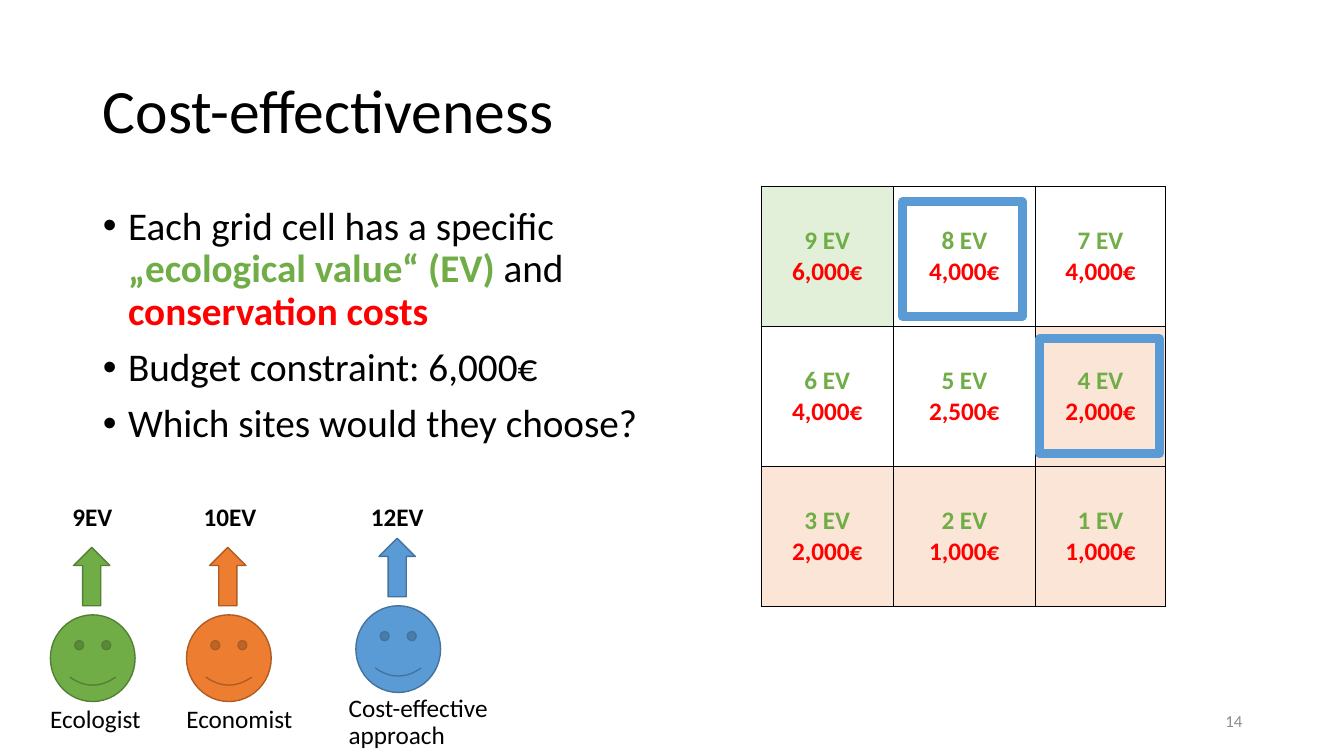
from lxml import etree
from pptx import Presentation
from pptx.dml.color import RGBColor
from pptx.enum import shapes, text
from pptx.oxml import ns, parse_xml
from pptx.util import Inches, Pt

COLORS = {
    "black": "000000", "gray": "8C8C8C", "green": "70AD47", "red": "FF0000",
    "orange": "ED7D31", "blue": "5B9BD5", "dark green": "538035",
    "dark orange": "AF5C24", "dark blue": "43739E",
    "pale green": "E2F0D9", "pale orange": "FBE5D6",
}


def style(font, size, color, bold=False):
    font.name = "Calibri"
    font.size = Pt(size)
    font.bold = bold
    font.color.rgb = RGBColor.from_string(COLORS[color])


def add_label(box, words, size, color="black", bold=False, spacing=0.9):
    label = slide.shapes.add_textbox(*map(Inches, box))
    label.text_frame.word_wrap = True
    paragraph = label.text_frame.paragraphs[0]
    paragraph.text = words
    paragraph.line_spacing = spacing
    paragraph.space_before = Pt(10)
    style(paragraph.font, size, color, bold)
    return label


deck = Presentation()
deck.slide_width, deck.slide_height = Inches(13.33), Inches(7.5)
slide = deck.slides.add_slide(deck.slide_layouts[1])

title, body = slide.placeholders
title.left, title.top, title.width, title.height = map(Inches, (0.92, 0.4, 11.5, 1.45))
title.text_frame.text = "Cost-effectiveness"
title.text_frame.vertical_anchor = text.MSO_ANCHOR.MIDDLE
title.text_frame.auto_size = text.MSO_AUTO_SIZE.NONE
heading = title.text_frame.paragraphs[0]
heading.alignment = text.PP_ALIGN.LEFT
heading.line_spacing = 0.9
style(heading.font, 44, "black")

body.left, body.top, body.width, body.height = map(Inches, (0.92, 2, 6.21, 5.78))
body.text_frame.auto_size = text.MSO_AUTO_SIZE.NONE
points = [
    [("Each grid cell has a specific ", "black", False),
     ("„ecological value“ (EV) ", "green", True),
     ("and ", "black", False),
     ("conservation costs", "red", True)],
    [("Budget constraint: 6,000€", "black", False)],
    [("Which sites would they choose?", "black", False)],
]
for index, parts in enumerate(points):
    point = body.text_frame.add_paragraph() if index else body.text_frame.paragraphs[0]
    point.line_spacing = 0.9
    point.space_before = Pt(10)
    properties = point._p.get_or_add_pPr()
    properties.set("marL", str(Inches(0.25)))
    properties.set("indent", str(-Inches(0.25)))
    etree.SubElement(properties, ns.qn("a:buChar")).set("char", "•")
    for words, color, bold in parts:
        run = point.add_run()
        run.text = words
        style(run.font, 28, color, bold)

sites = [
    [("9 EV", "6,000€", "pale green"), ("8 EV", "4,000€", None), ("7 EV", "4,000€", None)],
    [("6 EV", "4,000€", None), ("5 EV", "2,500€", None), ("4 EV", "2,000€", "pale orange")],
    [("3 EV", "2,000€", "pale orange"), ("2 EV", "1,000€", "pale orange"),
     ("1 EV", "1,000€", "pale orange")],
]
grid = slide.shapes.add_table(3, 3, *map(Inches, (7.55, 1.85, 4.01, 4.16))).table
grid.first_row = grid.horz_banding = False
for column, width in zip(grid.columns, (1.31, 1.41, 1.29)):
    column.width = Inches(width)
for row, row_sites in enumerate(sites):
    grid.rows[row].height = Inches(1.39)
    for column, (value, cost, fill) in enumerate(row_sites):
        cell = grid.cell(row, column)
        cell.vertical_anchor = text.MSO_ANCHOR.MIDDLE
        cell.text = f"{value}\n{cost}"
        for paragraph, color in zip(cell.text_frame.paragraphs, ("green", "red")):
            paragraph.alignment = text.PP_ALIGN.CENTER
            style(paragraph.font, 18, color, True)
        for side in "LRTB":
            cell._tc.get_or_add_tcPr().append(parse_xml(
                f'<a:ln{side} {ns.nsdecls("a")} w="{Pt(1)}"><a:solidFill>'
                f'<a:srgbClr val="{COLORS["black"]}"/></a:solidFill></a:ln{side}>'))
        if fill:
            cell.fill.solid()
            cell.fill.fore_color.rgb = RGBColor.from_string(COLORS[fill])
        else:
            cell.fill.background()

for left, top in ((8.95, 2), (10.31, 3.36)):
    chosen_site = slide.shapes.add_shape(
        shapes.MSO_SHAPE.RECTANGLE, *map(Inches, (left, top, 1.19, 1.14)))
    chosen_site.shadow.inherit = False
    chosen_site.fill.background()
    chosen_site.line.color.rgb = RGBColor.from_string(COLORS["blue"])
    chosen_site.line.width = Pt(6)

deciders = [
    ("Ecologist", "9EV", "green", 0.5, 6.1, 0.4, 6.96, 0.62),
    ("Economist", "10EV", "orange", 1.85, 6.1, 1.75, 6.96, 1.92),
    ("Cost-effective approach", "12EV", "blue", 3.53, 6.01, 3.36, 6.85, 3.58),
]
for role, total, color, left, top, role_left, role_top, total_left in deciders:
    for kind, box in (
        (shapes.MSO_SHAPE.SMILEY_FACE, (left, top, 0.84, 0.86)),
        (shapes.MSO_SHAPE.UP_ARROW, (left + 0.23, top - 0.67, 0.36, 0.58)),
    ):
        symbol = slide.shapes.add_shape(kind, *map(Inches, box))
        symbol.shadow.inherit = False
        symbol.fill.solid()
        symbol.fill.fore_color.rgb = RGBColor.from_string(COLORS[color])
        symbol.line.color.rgb = RGBColor.from_string(COLORS[f"dark {color}"])
        symbol.line.width = Pt(1)
    add_label((role_left, role_top, 2, 0.81), role, 18)
    add_label((total_left, 4.98, 0.78, 0.35), total, 18, bold=True, spacing=0.8)

page_number = add_label((9.42, 6.95, 3, 0.4), "14", 12, "gray", spacing=1.0)
page_number.text_frame.vertical_anchor = text.MSO_ANCHOR.MIDDLE
page_number.text_frame.paragraphs[0].alignment = text.PP_ALIGN.RIGHT
page_number.text_frame.paragraphs[0].space_before = Pt(0)

deck.save("out.pptx")
